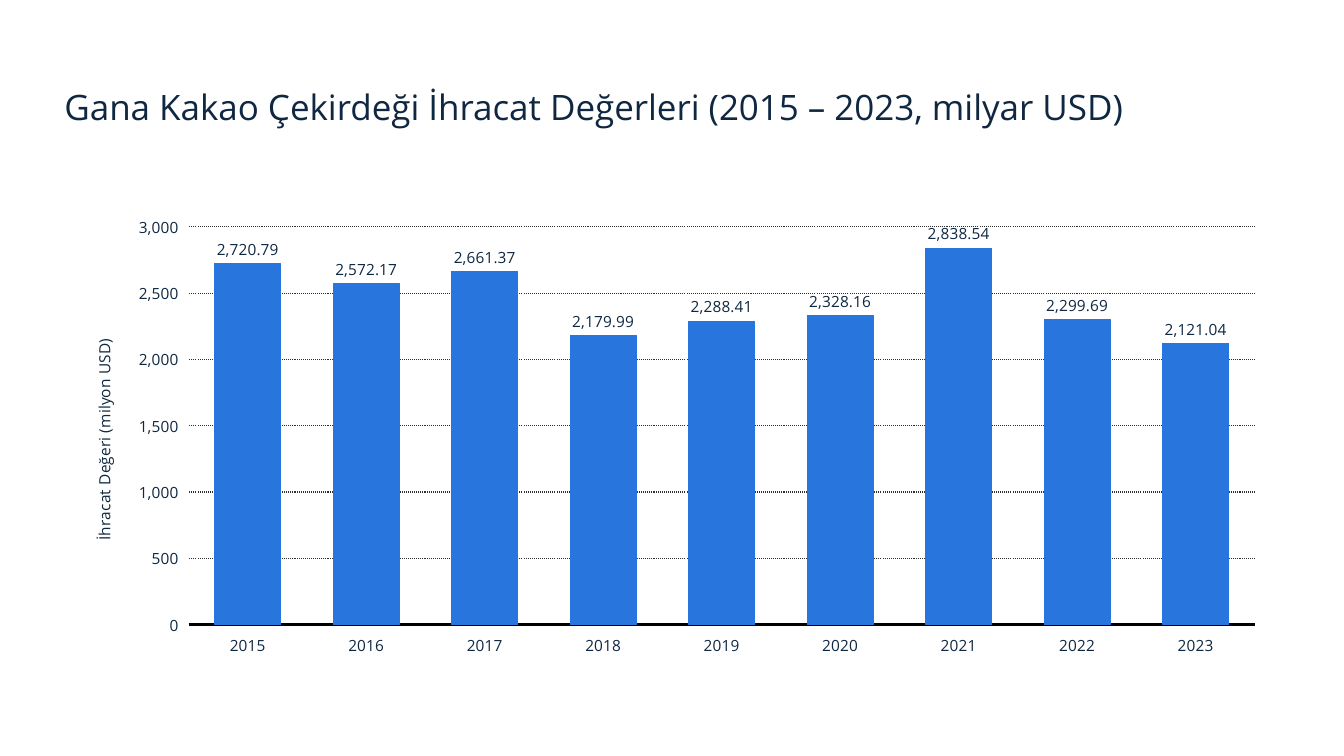
from dataclasses import dataclass

from lxml import etree
from pptx import Presentation
from pptx.chart.data import CategoryChartData
from pptx.dml.color import RGBColor
from pptx.enum.chart import XL_CHART_TYPE, XL_LABEL_POSITION, XL_TICK_LABEL_POSITION, XL_TICK_MARK
from pptx.enum.dml import MSO_LINE
from pptx.enum.text import MSO_ANCHOR, MSO_AUTO_SIZE, PP_ALIGN
from pptx.oxml.ns import qn
from pptx.util import Cm, Pt

COLUMNS = XL_CHART_TYPE.COLUMN_CLUSTERED
ABOVE_BAR = XL_LABEL_POSITION.OUTSIDE_END
LOW = XL_TICK_LABEL_POSITION.LOW
NO_TICK = XL_TICK_MARK.NONE
DOTTED = MSO_LINE.ROUND_DOT
BOTTOM = MSO_ANCHOR.BOTTOM
NO_FIT = MSO_AUTO_SIZE.NONE
LEFT, CENTER = PP_ALIGN.LEFT, PP_ALIGN.CENTER


@dataclass(frozen=True)
class Theme:
    font: str = "Open Sans"
    title_size: int = 25
    chart_size: int = 11
    background: RGBColor = RGBColor(0xFF, 0xFF, 0xFF)
    ink: RGBColor = RGBColor(0x0F, 0x27, 0x41)
    bar: RGBColor = RGBColor(0x28, 0x75, 0xDD)
    axis: RGBColor = RGBColor(0x00, 0x00, 0x00)
    grid: RGBColor = RGBColor(0x2F, 0x2F, 0x2F)


THEME = Theme()
EXPORTS = {
    "2015": 2720.79,
    "2016": 2572.17,
    "2017": 2661.37,
    "2018": 2179.99,
    "2019": 2288.41,
    "2020": 2328.16,
    "2021": 2838.54,
    "2022": 2299.69,
    "2023": 2121.04,
}


def format_font(font, size):
    font.name = THEME.font
    font.size = Pt(size)
    font.bold = False
    font.color.rgb = THEME.ink


def write_text(frame, text, size, align=LEFT, space_after=0):
    paragraph = frame.paragraphs[0]
    paragraph.alignment = align
    paragraph.space_after = Pt(space_after)
    run = paragraph.add_run()
    run.text = text
    format_font(run.font, size)


def set_line(line, color, width):
    line.color.rgb = color
    line.width = Pt(width)


def set_layout(element, index, **settings):
    for old_layout in element.findall(qn("c:layout")):
        element.remove(old_layout)
    layout = etree.Element(qn("c:layout"))
    manual = etree.SubElement(layout, qn("c:manualLayout"))
    for tag, value in settings.items():
        etree.SubElement(manual, qn(f"c:{tag}")).set("val", str(value))
    element.insert(index, layout)


def add_title(slide, left, top, width, height):
    title = slide.shapes.title
    title.left, title.top, title.width, title.height = left, top, width, height
    frame = title.text_frame
    frame.word_wrap = True
    frame.auto_size = NO_FIT
    frame.vertical_anchor = BOTTOM
    write_text(frame, "Gana Kakao Çekirdeği İhracat Değerleri (2015 – 2023, milyar USD)",
               size=THEME.title_size, space_after=5)


def format_axes(chart):
    years, values = chart.category_axis, chart.value_axis
    for axis in (years, values):
        axis.tick_label_position = LOW
        axis.major_tick_mark = axis.minor_tick_mark = NO_TICK
        format_font(axis.tick_labels.font, THEME.chart_size)
    years.has_major_gridlines = False
    set_line(years.format.line, THEME.axis, 2)

    values.minimum_scale, values.maximum_scale, values.major_unit = 0, 3000, 500
    values.tick_labels.number_format = "#,##0"
    values.tick_labels.number_format_is_linked = False
    values.format.line.fill.background()
    values.has_major_gridlines = True
    grid = values.major_gridlines.format.line
    set_line(grid, THEME.grid, 0.75)
    grid.dash_style = DOTTED

    write_text(values.axis_title.text_frame, "İhracat Değeri (milyon USD)",
               size=THEME.chart_size, align=CENTER)
    title_element = values.axis_title._element
    set_layout(title_element, 1, xMode="edge", yMode="edge", x=0.02, y=0.28)


def format_bars(plot):
    plot.gap_width, plot.overlap = 80, -30
    plot.vary_by_categories = False
    exports = plot.series[0]
    exports.format.fill.solid()
    exports.format.fill.fore_color.rgb = THEME.bar
    set_line(exports.format.line, THEME.bar, 0.75)
    labels = exports.data_labels
    labels.show_value = True
    labels.position = ABOVE_BAR
    labels.number_format = "#,##0.00"
    labels.number_format_is_linked = False
    format_font(labels.font, THEME.chart_size)


def add_export_chart(slide, left, top, width, height):
    data = CategoryChartData(number_format="#,##0.00")
    data.categories = EXPORTS.keys()
    data.add_series("Series 1", EXPORTS.values())
    chart = slide.shapes.add_chart(COLUMNS, left, top, width, height, data).chart
    chart.has_legend = False
    chart.has_title = False
    format_font(chart.font, THEME.chart_size)
    format_axes(chart)
    format_bars(chart.plots[0])
    plot_area = chart._chartSpace.find(".//" + qn("c:plotArea"))
    set_layout(plot_area, 0, layoutTarget="inner", xMode="edge", yMode="edge",
               x=0.102, y=0.042, w=0.878, h=0.87)


def main():
    deck = Presentation()
    deck.slide_width, deck.slide_height = Cm(33.87), Cm(19.05)
    slide = deck.slides.add_slide(deck.slide_layouts[5])
    slide.background.fill.solid()
    slide.background.fill.fore_color.rgb = THEME.background
    add_export_chart(slide, Cm(1.63), Cm(5.23), Cm(30.61), Cm(11.53))
    add_title(slide, Cm(1.37), Cm(1.17), Cm(31.09), Cm(2.18))
    deck.save("out.pptx")


if __name__ == "__main__":
    main()
